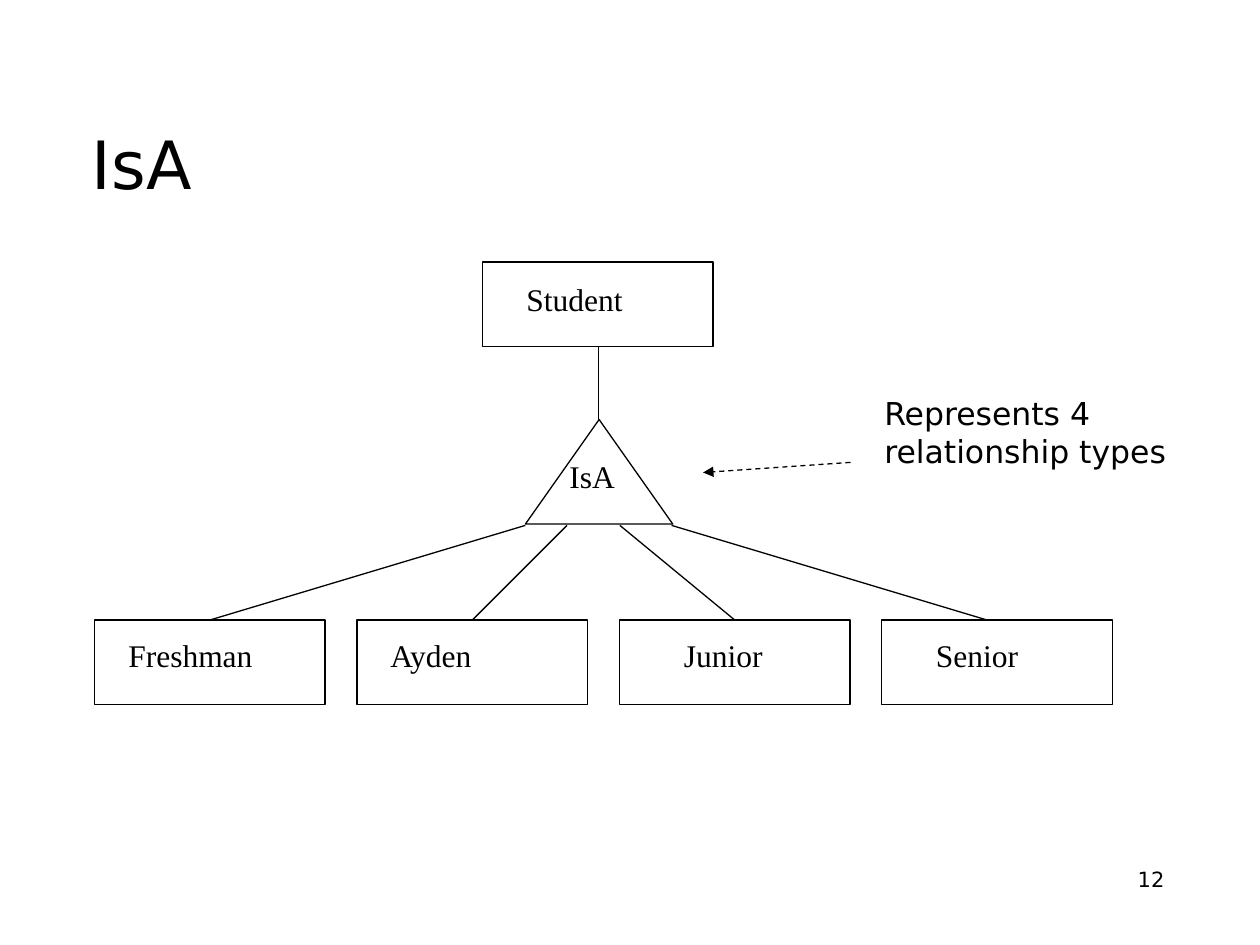
"""Build the IsA hierarchy slide."""
from dataclasses import dataclass

from lxml import etree
from pptx import Presentation
from pptx.dml.color import RGBColor
from pptx.enum.dml import MSO_LINE
from pptx.enum.shapes import MSO_CONNECTOR, MSO_SHAPE
from pptx.enum.text import MSO_ANCHOR, MSO_AUTO_SIZE, PP_ALIGN
from pptx.oxml.ns import qn
from pptx.slide import Slide
from pptx.text.text import TextFrame
from pptx.util import Inches, Pt

BLACK = RGBColor(0x00, 0x00, 0x00)
SANS = "DejaVu Sans"
SERIF = "Times New Roman"
TITLE_ONLY = 5
RECTANGLE = MSO_SHAPE.RECTANGLE
TRIANGLE = MSO_SHAPE.ISOSCELES_TRIANGLE
STRAIGHT = MSO_CONNECTOR.STRAIGHT
DASH = MSO_LINE.DASH
LEFT = PP_ALIGN.LEFT
RIGHT = PP_ALIGN.RIGHT
BOTTOM = MSO_ANCHOR.BOTTOM
FIT_SHAPE = MSO_AUTO_SIZE.SHAPE_TO_FIT_TEXT
NO_FIT = MSO_AUTO_SIZE.NONE

BOX_WIDTH, BOX_HEIGHT = 1.83, 0.67
CHILD_TOP = 4.92
CHILD_LEFT, CHILD_PITCH = 0.75, 2.083
TRIANGLE_BOTTOM = 4.17
LINE_WIDTH = 0.75


@dataclass(frozen=True)
class Label:
    text: str
    left: float
    top: float
    width: float
    height: float = 0.5
    font: str = SERIF


@dataclass(frozen=True)
class Link:
    start: tuple[float, float]
    end: tuple[float, float]
    is_pointer: bool = False


LABELS = (
    Label("Freshman", 0.92, 5, 1.52),
    Label("Ayden", 3, 5, 0.85, 0.4),
    Label("Junior", 5.33, 5, 1.03),
    Label("Senior", 7.33, 5, 1.07),
    Label("Student", 4.08, 2.17, 1.22),
    Label("IsA", 4.42, 3.58, 0.68),
    Label("Represents 4\nrelationship types", 6.92, 3.08, 2.56, 0.9, SANS),
)
CHILD_LINKS = tuple(
    Link((start, TRIANGLE_BOTTOM), (end, CHILD_TOP))
    for start, end in ((4.17, 1.67), (4.5, 3.75), (4.92, 5.83), (5.33, 7.83))
)
LINKS = (
    Link((4.75, 3.33), (4.75, 2.75)),
    *CHILD_LINKS,
    Link((6.75, 3.67), (5.58, 3.75), is_pointer=True),
)


def set_text(frame: TextFrame, text: str, font: str, size: float,
             alignment: PP_ALIGN = LEFT) -> None:
    """Fill a text frame and format all its runs."""
    frame.text = text
    for paragraph in frame.paragraphs:
        paragraph.alignment = alignment
        for run in paragraph.runs:
            run.font.name = font
            run.font.size = Pt(size)
            run.font.color.rgb = BLACK


def add_outline(slide: Slide, kind: MSO_SHAPE, left: float, top: float,
                width: float, height: float) -> None:
    """Draw an unfilled shape with a thin black line."""
    shape = slide.shapes.add_shape(
        kind, Inches(left), Inches(top), Inches(width), Inches(height))
    shape.shadow.inherit = False
    shape.fill.background()
    shape.line.color.rgb = BLACK
    shape.line.width = Pt(LINE_WIDTH)


def add_label(slide: Slide, label: Label) -> None:
    """Add an unwrapped label."""
    box = slide.shapes.add_textbox(
        Inches(label.left), Inches(label.top),
        Inches(label.width), Inches(label.height))
    box.text_frame.word_wrap = False
    box.text_frame.auto_size = FIT_SHAPE
    set_text(box.text_frame, label.text, label.font, 18)


def add_link(slide: Slide, link: Link) -> None:
    """Draw a plain line, or a dashed arrow for a pointer."""
    points = (Inches(value) for value in (*link.start, *link.end))
    connector = slide.shapes.add_connector(STRAIGHT, *points)
    connector.line.color.rgb = BLACK
    connector.line.width = Pt(LINE_WIDTH)
    properties = connector.element.spPr
    etree.SubElement(properties, qn("a:effectLst"))
    if link.is_pointer:
        connector.line.dash_style = DASH
        line = properties.find(qn("a:ln"))
        etree.SubElement(line, qn("a:tailEnd"), type="triangle")


def add_title(slide: Slide) -> None:
    """Place and format the title."""
    title = slide.shapes.title
    title.left, title.top = Inches(0.63), Inches(0.33)
    title.width, title.height = Inches(8.75), Inches(1.33)
    title.text_frame.vertical_anchor = BOTTOM
    title.text_frame.auto_size = NO_FIT
    set_text(title.text_frame, "IsA", SANS, 38)


def add_page_number(slide: Slide) -> None:
    """Add the page number at the lower right."""
    box = slide.shapes.add_textbox(
        Inches(7.17), Inches(6.83), Inches(2.17), Inches(0.52))
    box.text_frame.word_wrap = True
    set_text(box.text_frame, "12", SANS, 12, RIGHT)


def main() -> None:
    """Build and save the presentation."""
    presentation = Presentation()
    presentation.slide_width = Inches(10)
    presentation.slide_height = Inches(7.5)
    slide = presentation.slides.add_slide(
        presentation.slide_layouts[TITLE_ONLY])
    add_page_number(slide)
    add_title(slide)
    add_outline(slide, RECTANGLE, 3.83, 2.08, BOX_WIDTH, BOX_HEIGHT)
    for index in range(len(CHILD_LINKS)):
        add_outline(slide, RECTANGLE, CHILD_LEFT + index * CHILD_PITCH,
                    CHILD_TOP, BOX_WIDTH, BOX_HEIGHT)
    add_outline(slide, TRIANGLE, 4.17, 3.33, 1.17, 0.83)
    for label in LABELS:
        add_label(slide, label)
    for link in LINKS:
        add_link(slide, link)
    presentation.save("out.pptx")


if __name__ == "__main__":
    main()
